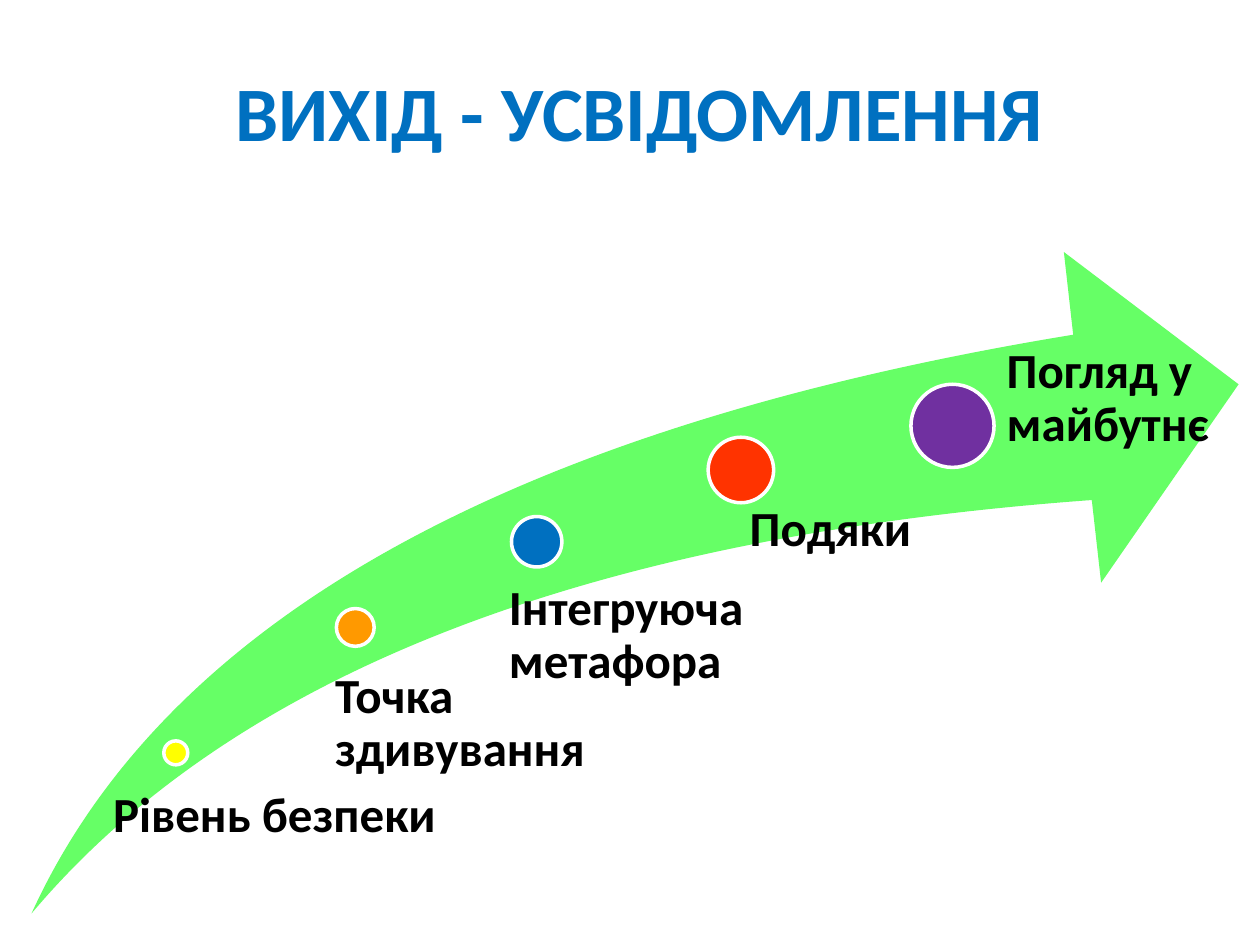
from pptx import Presentation
from pptx.dml.color import RGBColor
from pptx.enum.shapes import MSO_SHAPE as Preset
from pptx.enum.text import MSO_ANCHOR as Anchor, PP_ALIGN as Align
from pptx.util import Inches, Pt

TITLE = "ВИХІД - УСВІДОМЛЕННЯ"
TITLE_AREA = (0.58, 0.25, 9, 1.25)
ARROW_AREA = (0.25, 2, 9.58, 5.25)

# label, dot colour, dot (left, top, diameter), label (left, top, width, height)
STEPS = [
    ("Рівень безпеки", "FFFF00", (1.3, 5.88, 0.19), (0.8, 6.27, 3.03, 0.71)),
    ("Точка здивування", "FF9900", (2.67, 4.83, 0.3), (2.5, 5.33, 2.21, 1.8)),
    ("Інтегруюча метафора", "0070C0", (4.06, 4.1, 0.4), (3.83, 4.63, 2.36, 2.62)),
    ("Подяки", "FF3300", (5.62, 3.47, 0.52), (5.67, 4, 1.68, 2.98)),
    ("Погляд у майбутнє", "7030A0", (7.23, 3.05, 0.66), (7.64, 2.75, 2.2, 2.97)),
]

THEME = {
    "font": "Calibri",
    "title": {"size": 44, "color": "0070C0"},
    "label": {"size": 28, "color": "000000"},
    "arrow": "66FF66",
    "dot_line": "FFFFFF",
    "dot_line_width": 2,
}
INDENT_PER_DIAMETER = 0.53


def inches(values):
    return [Inches(value) for value in values]


def set_format(target, values):
    for name, value in values.items():
        setattr(target, name, value)


def write(box, text, style, frame_format, para_format):
    frame = box.text_frame
    set_format(frame, {"word_wrap": True, **frame_format})
    para = frame.paragraphs[0]
    set_format(para, para_format)
    span = para.add_run()
    span.text = text
    set_format(span.font, {"name": THEME["font"], "size": Pt(style["size"]), "bold": True})
    span.font.color.rgb = RGBColor.from_string(style["color"])


def add_filled(shapes, preset, area, color):
    shape = shapes.add_shape(preset, *inches(area))
    shape.shadow.inherit = False
    shape.fill.solid()
    shape.fill.fore_color.rgb = RGBColor.from_string(color)
    return shape


def add_step(shapes, label, color, dot_place, label_area):
    left, top, diameter = dot_place
    dot = add_filled(shapes, Preset.OVAL, (left, top, diameter, diameter), color)
    dot.line.color.rgb = RGBColor.from_string(THEME["dot_line"])
    dot.line.width = Pt(THEME["dot_line_width"])
    # The label indent grows with the dot
    insets = {
        "margin_left": Inches(round(diameter * INDENT_PER_DIAMETER, 2)),
        "margin_top": 0, "margin_right": 0, "margin_bottom": 0,
        "vertical_anchor": Anchor.TOP,
    }
    box = shapes.add_textbox(*inches(label_area))
    write(box, label, THEME["label"], insets,
          {"alignment": Align.LEFT, "line_spacing": 0.9})


def main():
    deck = Presentation()
    deck.slide_width, deck.slide_height = inches((10, 7.5))
    page = deck.slides.add_slide(deck.slide_layouts[5])

    # Title
    title = page.shapes.title
    set_format(title, dict(zip(("left", "top", "width", "height"), inches(TITLE_AREA))))
    write(title, TITLE, THEME["title"], {"vertical_anchor": Anchor.MIDDLE},
          {"alignment": Align.CENTER})

    # Rising arrow with its steps
    diagram = page.shapes.add_group_shape().shapes
    arrow = add_filled(diagram, Preset.SWOOSH_ARROW, ARROW_AREA, THEME["arrow"])
    arrow.line.fill.background()
    for index in range(2):
        arrow.adjustments[index] = 0.25
    for step in STEPS:
        add_step(diagram, *step)

    deck.save("out.pptx")


if __name__ == "__main__":
    main()
